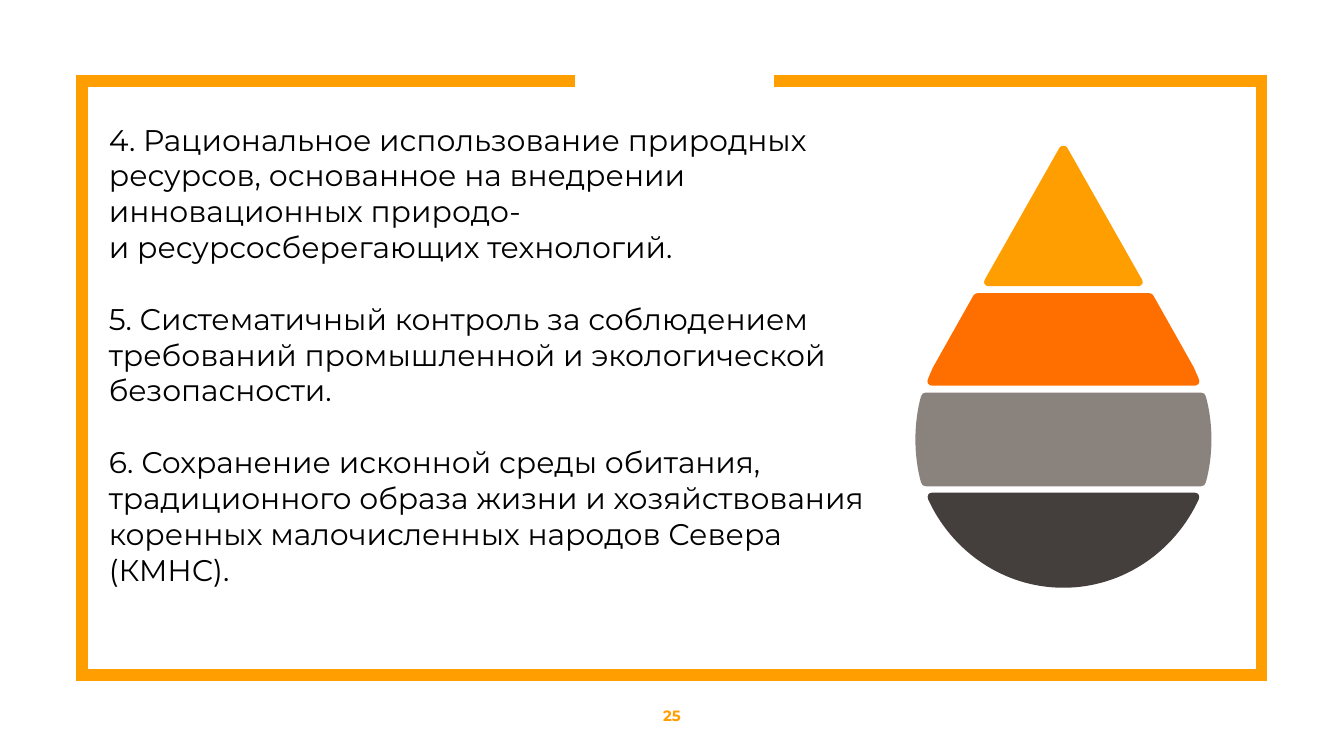
from dataclasses import dataclass

from lxml import etree
from pptx import Presentation
from pptx.dml.color import RGBColor
from pptx.enum import text as t
from pptx.oxml.ns import qn
from pptx.util import Pt

AMBER = RGBColor(0xFF, 0x9E, 0x00)
ORANGE = RGBColor(0xFF, 0x6F, 0x00)
TAUPE = RGBColor(0x8A, 0x82, 0x7D)
DARK = RGBColor(0x44, 0x3F, 0x3D)
BLACK = RGBColor(0, 0, 0)
FONT = "Montserrat"
WIDTH, HEIGHT = 720, 405
AXIS = 569.7  # vertical axis of the drop

GOALS = [
    "4. Рациональное использование природных ресурсов, основанное на\u00a0внедрении "
    "инновационных природо- и\u00a0ресурсосберегающих технологий.",
    "5. Систематичный контроль за\u00a0соблюдением требований промышленной "
    "и\u00a0экологической безопасности.",
    "6. Сохранение исконной среды обитания, традиционного образа жизни "
    "и\u00a0хозяйствования коренных малочисленных народов Севера (КМНС).",
]
FRAME = [(308, 43.4), (44, 43.4), (44, 361.6), (676, 361.6), (676, 43.4), (414.5, 43.4)]


@dataclass
class Band:
    """Right half of a drop layer, top to bottom, as offsets from the axis.

    A step of two numbers is a corner, a step of six is a Bezier curve.
    """
    color: RGBColor
    steps: list[tuple]


BANDS = [
    Band(TAUPE, [(73.7, 210.3), (75, 210.3, 76, 211, 76.3, 212.4),
                 (78.3, 219.6, 79.3, 227.5, 79.3, 235.4),
                 (79.3, 243.3, 78.3, 251.2, 76.3, 258.4),
                 (76, 259.8, 75, 260.5, 73.7, 260.5)]),
    Band(AMBER, [(0, 78.1), (1, 78.1, 1.6, 78.4, 2.1, 79.2), (42.1, 149.8),
                 (43.2, 151.5, 42, 153.3, 40.2, 153.3)]),
    Band(DARK, [(70.5, 264), (72.3, 264, 73.2, 265.7, 72.5, 267.5),
                (60, 295, 32.4, 314.9, 0, 314.9)]),
    Band(ORANGE, [(45.4, 157), (46.4, 157, 47.3, 157.4, 48, 158), (69.9, 196.9),
                  (70.8, 199, 71.7, 201, 72.6, 203.2),
                  (73.4, 204.9, 72.2, 206.6, 70.4, 206.6)]),
]


def pairs(step: tuple) -> list[tuple]:
    return list(zip(step[::2], step[1::2]))


def mirror(steps: list[tuple]) -> list[list[tuple]]:
    """Complete a half outline with its reflection, as lists of points."""
    half = [pairs(step) for step in steps]
    whole = [[(AXIS + x, y) for x, y in step] for step in half]
    x, y = half[-1][-1]
    if x:
        whole.append([(AXIS - x, y)])
    for prev, step in reversed(list(zip(half, half[1:]))):
        back = step[-2::-1] + [prev[-1]]
        whole.append([(AXIS - x, y) for x, y in back])
    return whole


def add_path(slide, steps: list[list[tuple]], close: bool):
    """Draw an outline, with Bezier curves where a step has three points."""
    spots = [(Pt(x), Pt(y)) for x, y in (step[-1] for step in steps)]
    pen = slide.shapes.build_freeform(*spots[0], scale=1.0)
    pen.add_line_segments(spots[1:], close=close)
    shape = pen.convert_to_shape()
    shape.shadow.inherit = False
    track = shape._element.find(".//" + qn("a:path"))
    for node, step in zip(list(track), steps):
        if len(step) == 3:
            curve = etree.Element(qn("a:cubicBezTo"))
            for x, y in step:
                etree.SubElement(curve, qn("a:pt"), x=str(Pt(x) - shape.left),
                                 y=str(Pt(y) - shape.top))
            track.replace(node, curve)
    return shape


def add_frame(slide) -> None:
    shape = add_path(slide, [[spot] for spot in FRAME], close=False)
    shape.fill.background()
    shape.line.color.rgb = AMBER
    shape.line.width = Pt(6)
    line = shape.line._get_or_add_ln()
    etree.SubElement(line, qn("a:miter"), lim="800000")


def add_band(slide, band: Band) -> None:
    shape = add_path(slide, mirror(band.steps), close=True)
    shape.fill.solid()
    shape.fill.fore_color.rgb = band.color
    shape.line.fill.background()


def set_text(shape, box: tuple, lines: list[str], color: RGBColor,
             font: dict, para: dict, anchor) -> None:
    for name, value in zip(("left", "top", "width", "height"), box):
        setattr(shape, name, Pt(value))
    frame = shape.text_frame
    form = {"word_wrap": True, "vertical_anchor": anchor,
            "auto_size": t.MSO_AUTO_SIZE.NONE}
    form |= {f"margin_{side}": Pt(7.2) for side in ("left", "top", "right", "bottom")}
    for name, value in form.items():
        setattr(frame, name, value)
    for i, line in enumerate(lines):
        item = frame.add_paragraph() if i else frame.paragraphs[0]
        for name, value in para.items():
            setattr(item, name, value)
        if not i:
            item.space_before = Pt(0)
        run = item.add_run()
        run.text = line
        run.font.color.rgb = color
        for name, value in font.items():
            setattr(run.font, name, value)


def main() -> None:
    deck = Presentation()
    deck.slide_width, deck.slide_height = Pt(WIDTH), Pt(HEIGHT)
    slide = deck.slides.add_slide(deck.slide_layouts[2])
    title = slide.shapes.title._element
    title.getparent().remove(title)
    add_frame(slide)
    set_text(slide.placeholders[1], (51.1, 57.8, 434.2, 61.9), GOALS, BLACK,
             {"name": FONT, "size": Pt(16)},
             {"alignment": t.PP_ALIGN.LEFT, "space_before": Pt(19.2)},
             t.MSO_ANCHOR.TOP)
    page = slide.shapes.add_textbox(0, 0, 0, 0)
    set_text(page, (0, 361.6, WIDTH, 43.4), ["25"], AMBER,
             {"name": FONT, "size": Pt(8), "bold": True},
             {"alignment": t.PP_ALIGN.CENTER}, t.MSO_ANCHOR.MIDDLE)
    for band in BANDS:
        add_band(slide, band)
    deck.save("out.pptx")


if __name__ == "__main__":
    main()
